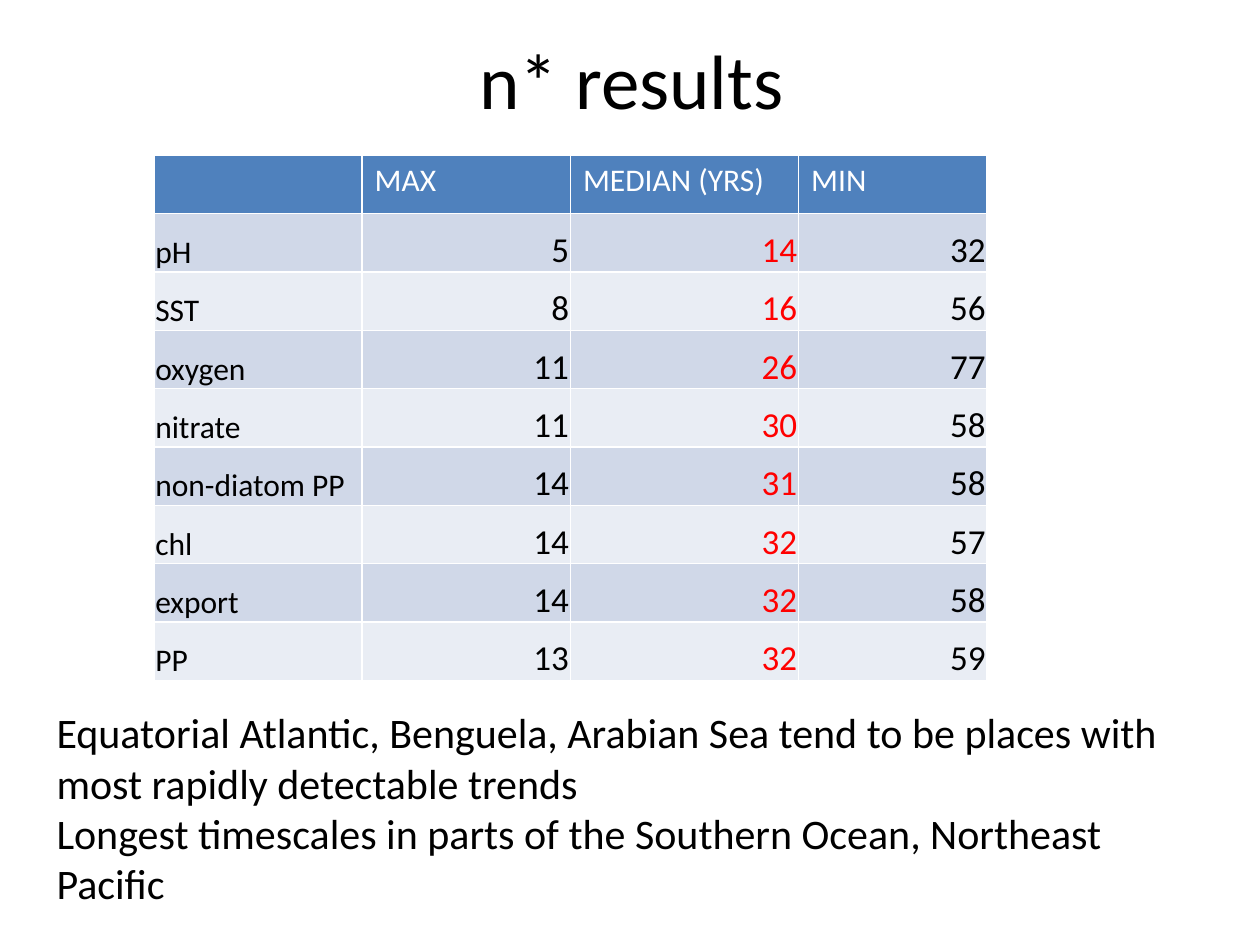
import dataclasses
import pptx
import pptx.util
import pptx.dml.color
import pptx.enum.text

Cm = pptx.util.Cm
Pt = pptx.util.Pt
Align = pptx.enum.text.PP_ALIGN
Anchor = pptx.enum.text.MSO_ANCHOR


@dataclasses.dataclass
class Theme:
    font: str = "Calibri"
    ink: str = "000000"
    light: str = "FFFFFF"
    mark: str = "FF0000"
    head: str = "4F81BD"
    bands: tuple = ("D0D8E8", "E9EDF4")
    title: int = 44
    note: int = 24
    value: int = 20
    label: int = 18


class Deck:
    def __init__(self, theme):
        self.theme = theme
        self.file = pptx.Presentation()
        self.file.slide_width = Cm(25.4)
        self.file.slide_height = Cm(19.05)
        self.slide = self.file.slides.add_slide(self.file.slide_layouts[5])

    def style(self, para, size, color, align=Align.LEFT):
        para.alignment = align
        font = para.font
        font.name = self.theme.font
        font.size = Pt(size)
        font.bold = False
        font.color.rgb = pptx.dml.color.RGBColor.from_string(color)

    def title(self, text, left, top, width, height):
        shape = self.slide.shapes.title
        shape.left, shape.top = Cm(left), Cm(top)
        shape.width, shape.height = Cm(width), Cm(height)
        frame = shape.text_frame
        frame.text = text
        frame.vertical_anchor = Anchor.MIDDLE
        self.style(frame.paragraphs[0], self.theme.title, self.theme.ink, Align.CENTER)

    def cell(self, cell, text, fill, size, color, align=Align.LEFT):
        cell.text = text
        cell.fill.solid()
        cell.fill.fore_color.rgb = pptx.dml.color.RGBColor.from_string(fill)
        self.style(cell.text_frame.paragraphs[0], size, color, align)

    def table(self, heads, rows, left, top, widths, height):
        theme = self.theme
        table = self.slide.shapes.add_table(
            len(rows) + 1, len(heads), Cm(left), Cm(top), Cm(sum(widths)), Cm(height)
        ).table
        for col, width in zip(table.columns, widths):
            col.width = Cm(width)
        for c, text in enumerate(heads):
            self.cell(table.cell(0, c), text, theme.head, theme.label, theme.light)
        for r, row in enumerate(rows):
            for c, item in enumerate(row):
                cell = table.cell(r + 1, c)
                size = theme.value if c else theme.label
                color = theme.mark if c == 2 else theme.ink
                align = Align.RIGHT if c else Align.LEFT
                self.cell(cell, str(item), theme.bands[r % 2], size, color, align)
                cell.vertical_anchor = Anchor.BOTTOM
                cell.margin_left = cell.margin_right = cell.margin_top = Cm(0.03)
                cell.margin_bottom = 0

    def note(self, lines, left, top, width, height):
        box = self.slide.shapes.add_textbox(Cm(left), Cm(top), Cm(width), Cm(height))
        frame = box.text_frame
        frame.word_wrap = True
        frame.auto_size = pptx.enum.text.MSO_AUTO_SIZE.SHAPE_TO_FIT_TEXT
        frame.text = "\n".join(lines)
        for para in frame.paragraphs:
            self.style(para, self.theme.note, self.theme.ink)


HEADS = ("", "MAX", "MEDIAN (YRS)", "MIN")
ROWS = (
    ("pH", 5, 14, 32),
    ("SST", 8, 16, 56),
    ("oxygen", 11, 26, 77),
    ("nitrate", 11, 30, 58),
    ("non-diatom PP", 14, 31, 58),
    ("chl", 14, 32, 57),
    ("export", 14, 32, 58),
    ("PP", 13, 32, 59),
)
NOTES = (
    "Equatorial Atlantic, Benguela, Arabian Sea tend to be places with most rapidly detectable trends",
    "Longest timescales in parts of the Southern Ocean, Northeast Pacific",
)


def main():
    deck = Deck(Theme())
    deck.title("n* results", 1.3, 0, 22.86, 3.18)
    deck.table(HEADS, ROWS, 3.1, 3.13, (4.2, 4.2, 4.6, 3.8), 10.59)
    deck.note(NOTES, 0.89, 14.12, 23.19, 4.37)
    deck.file.save("out.pptx")


if __name__ == "__main__":
    main()
